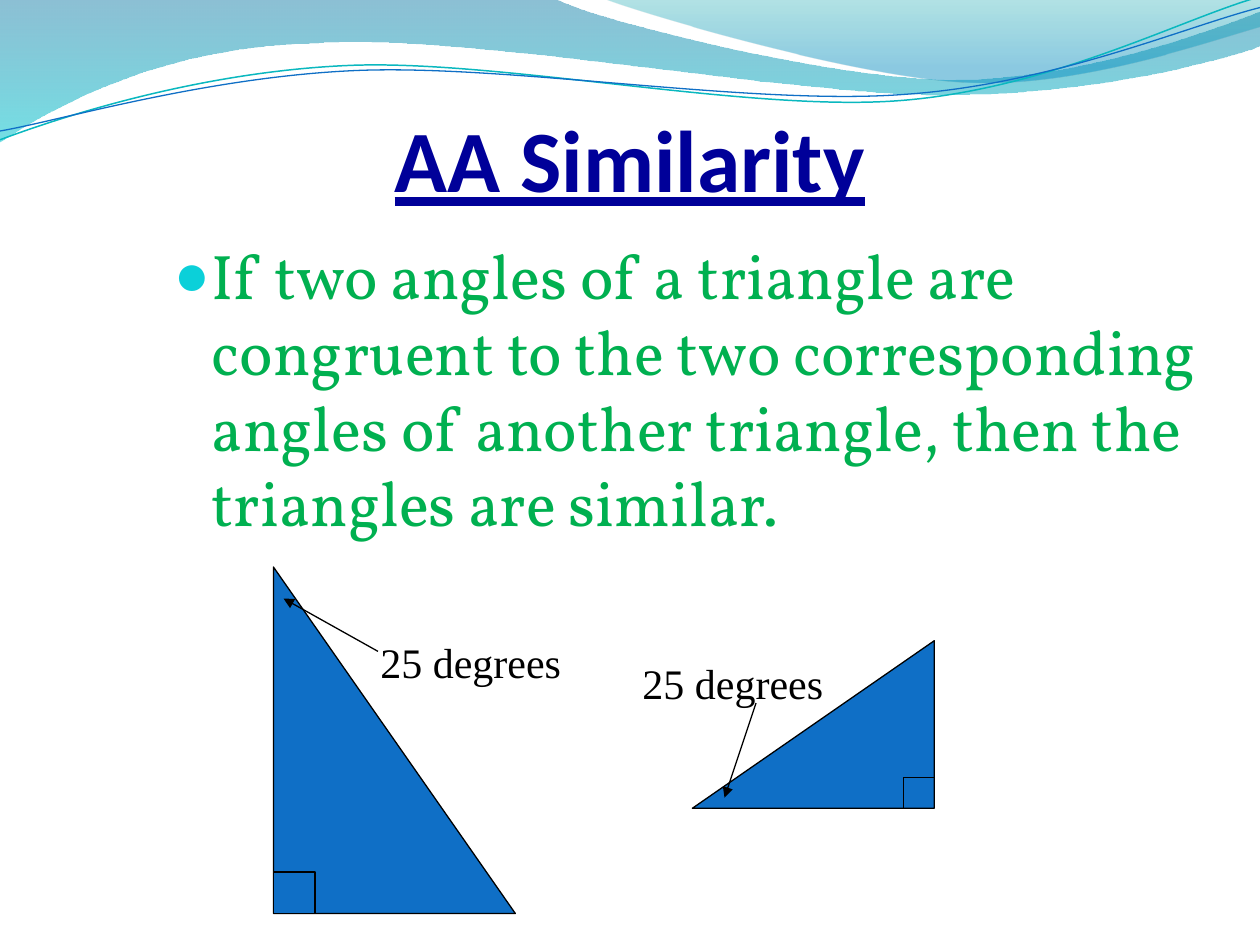
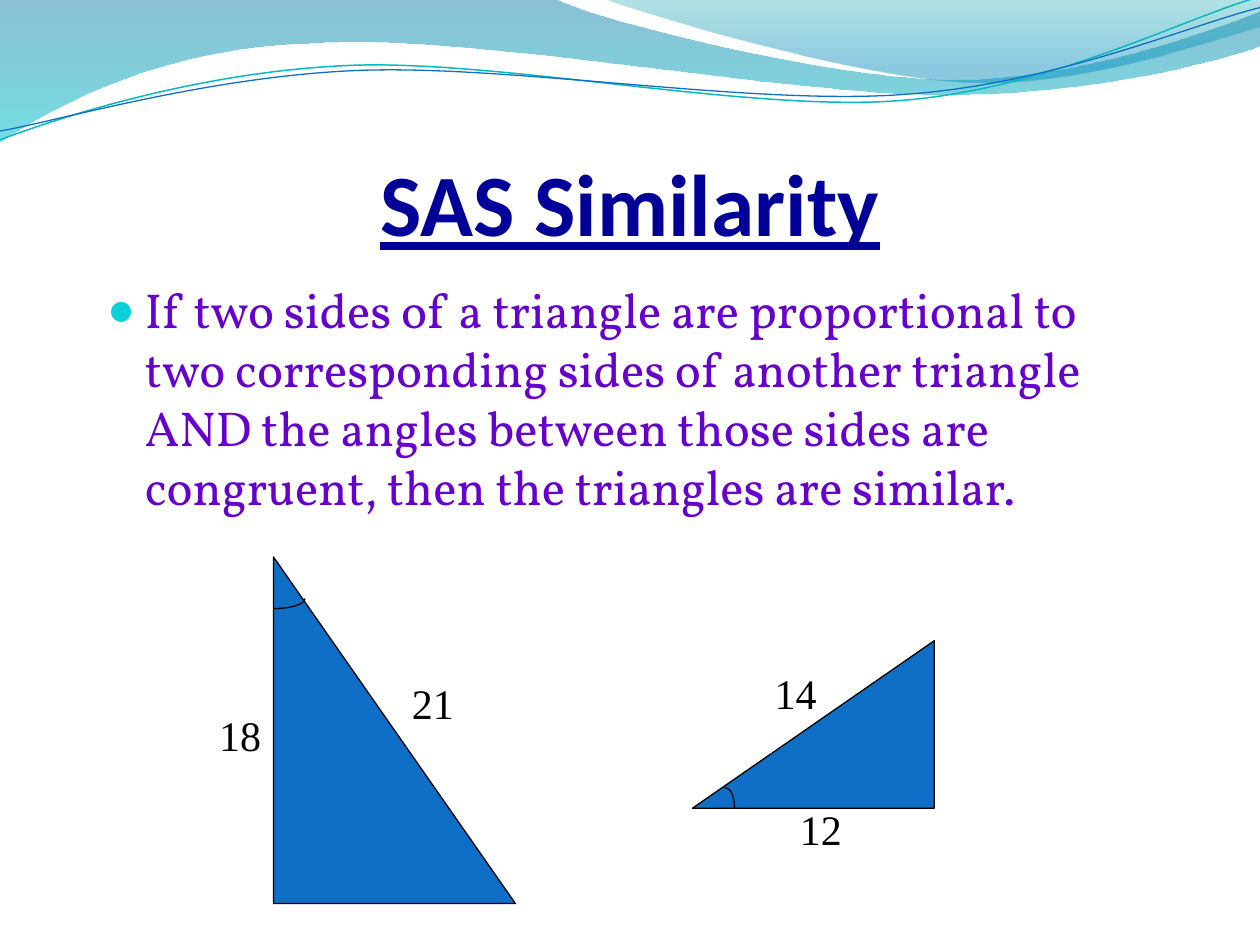
from lxml.etree import SubElement as Sub
from pptx import Presentation
from pptx.dml.color import RGBColor
from pptx.enum.shapes import MSO_CONNECTOR as Link, MSO_SHAPE as Kind
from pptx.enum.text import MSO_ANCHOR as Anchor, MSO_AUTO_SIZE as Fit, PP_ALIGN as Align
from pptx.oxml.ns import qn
from pptx.util import Pt

PX = 9144

BLACK = RGBColor(0, 0, 0)
NAVY = RGBColor(0x00, 0x00, 0x99)
BLUE = RGBColor(0x0F, 0x6F, 0xC6)
TEAL = RGBColor(0x0A, 0xB8, 0xBF)
GREEN = RGBColor(0x00, 0xB0, 0x50)
PURPLE = RGBColor(0x66, 0x00, 0xCC)
CYAN = RGBColor(0x0B, 0xD0, 0xD9)
DEEP = RGBColor(0x00, 0x74, 0xA1)
AQUA = RGBColor(0x00, 0xC6, 0xCF)
SEA = RGBColor(0x00, 0xA1, 0xA9)
SKY = RGBColor(0x00, 0x8B, 0xBF)

BANDS = [
    ([(0, 0), (440, -1), (476, 17, 664, 63, 758, 63), (853, 63, 958, 26, 1000, 9),
      (1001, 36), (983, 44, 870, 76, 746, 75), (622, 75, 382, 28, 257, 34),
      (129, 36, 46, 83, -1, 113)],
     [(0, DEEP, 45), (1, AQUA, 55)]),
    ([(479, -1), (509, 11, 682, 62, 769, 65), (856, 69, 961, 32, 1000, 21), (1000, 0)],
     [(0, SEA, 30), (0.8, SKY, 45)]),
]
WAVES = [
    ([(0, 111), (48, 93, 158, 57, 277, 52), (395, 47, 593, 89, 713, 80),
      (833, 71, 938, 15, 998, -2)], TEAL, 0.85),
    ([(0, 104), (47, 96, 164, 61, 283, 56), (403, 51, 597, 84, 717, 75),
      (836, 67, 941, 21, 1000, 6)], BLUE, 0.75),
]


class Deck:
    def __init__(self):
        self.show = Presentation()
        self.show.slide_width = 1000 * PX
        self.show.slide_height = 750 * PX
        self.slide = None

    def page(self):
        self.slide = self.show.slides.add_slide(self.show.slide_layouts[1])

    def place(self, item, box):
        item.left, item.top, item.width, item.height = (v * PX for v in box)

    def style(self, text, font, size, color):
        for run in text.runs:
            run.font.name = font
            run.font.size = Pt(size)
            run.font.color.rgb = color

    def pen(self, item, color=BLACK, width=0.75):
        item.line.color.rgb = color
        item.line.width = Pt(width)

    def title(self, words, box):
        item = self.slide.shapes.title
        self.place(item, box)
        frame = item.text_frame
        frame.text = words
        frame.auto_size = Fit.NONE
        frame.vertical_anchor = Anchor.BOTTOM
        frame.margin_left = frame.margin_right = frame.margin_bottom = 0
        frame.margin_top = 5 * PX
        text = frame.paragraphs[0]
        text.alignment = Align.CENTER
        self.style(text, "Calibri", 50, NAVY)
        text.runs[0].font.bold = True
        text.runs[0].font.underline = True

    def body(self, words, box, size, color):
        item = self.slide.placeholders[1]
        self.place(item, box)
        frame = item.text_frame
        frame.text = words
        frame.auto_size = Fit.NONE
        text = frame.paragraphs[0]
        self.style(text, "Vollkorn", size, color)
        props = text._p.get_or_add_pPr()
        props.set("marL", str(30 * PX))
        props.set("indent", str(-30 * PX))
        Sub(Sub(props, qn("a:buClr")), qn("a:srgbClr"), val=str(CYAN))
        Sub(props, qn("a:buSzPct"), val="95000")
        Sub(props, qn("a:buFont"), typeface="Arial")
        Sub(props, qn("a:buChar"), char="●")

    def label(self, words, box, align=Align.LEFT):
        frame = self.slide.shapes.add_textbox(*(v * PX for v in box)).text_frame
        frame.word_wrap = True
        frame.text = words
        text = frame.paragraphs[0]
        text.alignment = align
        self.style(text, "Times New Roman", 24, BLACK)

    def shape(self, kind, box, turn=0):
        item = self.slide.shapes.add_shape(kind, *(v * PX for v in box))
        item.rotation = turn
        item.shadow.inherit = False
        item.fill.solid()
        item.fill.fore_color.rgb = BLUE
        self.pen(item)

    def line(self, start, end, arrow=False):
        item = self.slide.shapes.add_connector(
            Link.STRAIGHT, *(v * PX for v in start + end))
        self.pen(item)
        if arrow:
            Sub(item.line._get_or_add_ln(), qn("a:tailEnd"), type="triangle")
        Sub(item.element.spPr, qn("a:effectLst"))

    def form(self, parts, close=False):
        spots = [part[-2:] for part in parts]
        build = self.slide.shapes.build_freeform(*spots[0], scale=PX)
        build.add_line_segments(spots[1:], close=close)
        item = build.convert_to_shape()
        item.shadow.inherit = False
        left = min(x for x, _ in spots)
        top = min(y for _, y in spots)
        lines = list(item.element.spPr.iter(qn("a:lnTo")))
        for part, node in zip(parts[1:], lines):
            if len(part) == 6:
                bend = node.makeelement(qn("a:cubicBezTo"))
                for x, y in zip(part[::2], part[1::2]):
                    Sub(bend, qn("a:pt"), x=str(x - left), y=str(y - top))
                node.getparent().replace(node, bend)
        return item

    def curve(self, parts, color=BLACK, width=0.75):
        item = self.form(parts)
        item.fill.background()
        self.pen(item, color, width)
        return item

    def band(self, parts, stops):
        item = self.form(parts, True)
        item.line.fill.background()
        item.fill.gradient()
        item.fill.gradient_angle = 270
        for stop, (spot, color, _) in zip(item.fill.gradient_stops, stops):
            stop.position = spot
            stop.color.rgb = color
        tones = item.element.spPr.iter(qn("a:srgbClr"))
        for tone, (_, _, alpha) in zip(list(tones), stops):
            Sub(tone, qn("a:alpha"), val=str(alpha * 1000))
        return item

    def header(self):
        items = [self.band(*band) for band in BANDS]
        items += [self.curve(*wave) for wave in WAVES]
        tree = self.show.slide_master.shapes.element
        for spot, item in enumerate(items, 2):
            tree.insert(spot, item.element)

    def pair(self, top):
        self.shape(Kind.RIGHT_TRIANGLE, (217, top, 192, 275))
        self.shape(Kind.RIGHT_TRIANGLE, (579, 479, 133, 192), 270)


def main():
    deck = Deck()

    deck.page()
    deck.header()
    deck.title("AA Similarity", (50, 77, 900, 90))
    deck.body("If two angles of a triangle are congruent to the two corresponding "
              "angles of another triangle, then the triangles are similar.",
              (128, 183, 872, 233), 36, GREEN)
    deck.pair(450)
    deck.shape(Kind.RECTANGLE, (217, 692, 33, 33))
    deck.line((717, 642), (717, 617))
    deck.line((742, 617), (717, 617))
    deck.line((300, 517), (225, 475), True)
    deck.line((600, 558), (575, 633), True)
    for left, top in ((292, 500), (500, 517)):
        deck.label("25 degrees", (left, top, 175, 50))

    deck.page()
    deck.title("SAS Similarity", (50, 77, 900, 125))
    deck.body("If two sides of a triangle are proportional to two corresponding "
              "sides of another triangle AND the angles between those sides are "
              "congruent, then the triangles are similar.",
              (75, 217, 847, 229), 28, PURPLE)
    deck.pair(442)
    deck.label("18", (150, 558, 67, 50), Align.RIGHT)
    deck.label("21", (317, 533, 75, 50))
    deck.label("12", (625, 633, 67, 50))
    deck.label("14", (583, 525, 75, 50), Align.RIGHT)
    deck.curve([(217, 483), (230, 483, 242, 480, 242, 475)])
    deck.curve([(583, 642), (583, 632, 580, 625, 575, 625)])

    deck.show.save("out.pptx")


if __name__ == "__main__":
    main()
